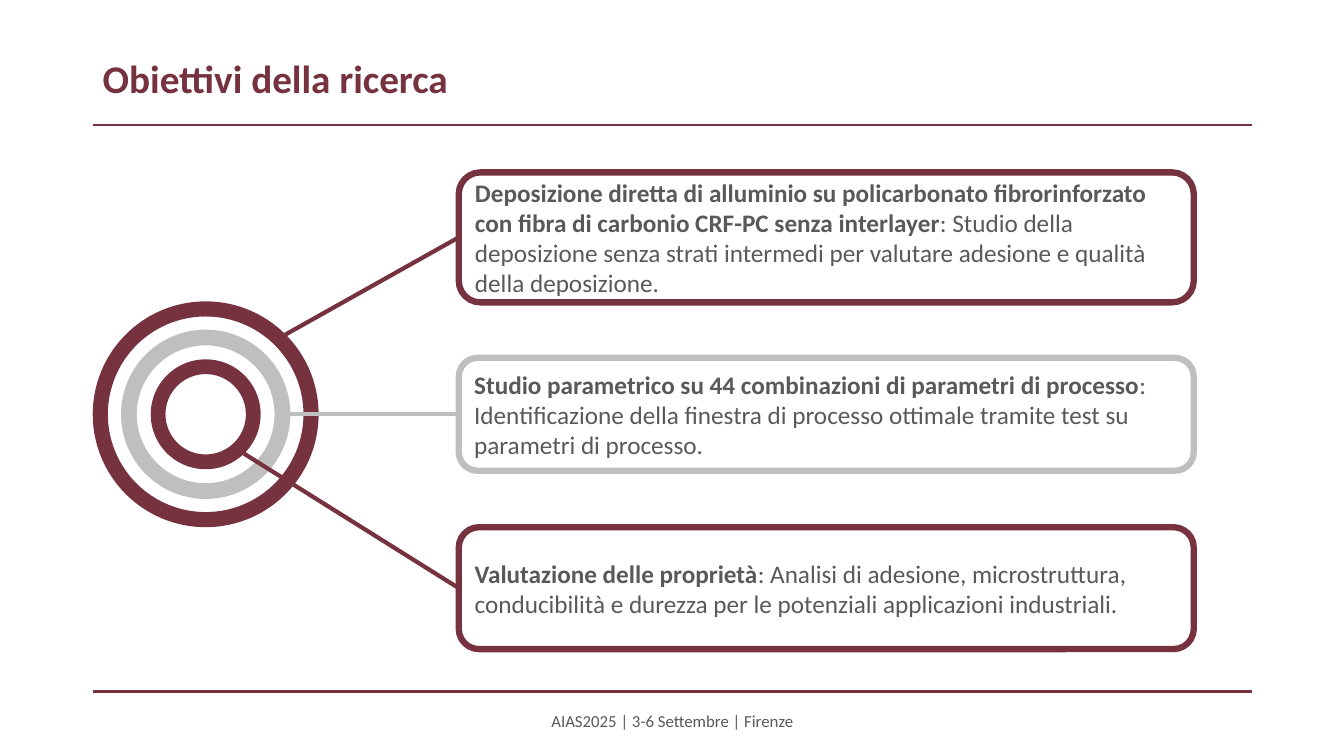
from lxml import etree
from pptx import Presentation
from pptx.dml.color import RGBColor
from pptx.enum.shapes import MSO_CONNECTOR, MSO_SHAPE
from pptx.enum.text import MSO_ANCHOR, PP_ALIGN
from pptx.oxml.ns import qn
from pptx.util import Inches, Pt

STRAIGHT = MSO_CONNECTOR.STRAIGHT
DONUT, ROUNDED = MSO_SHAPE.DONUT, MSO_SHAPE.FLOWCHART_ALTERNATE_PROCESS
MIDDLE = MSO_ANCHOR.MIDDLE
LEFT, CENTER = PP_ALIGN.LEFT, PP_ALIGN.CENTER
LEFT_SIDE = 1

COLORS = {"wine": "76323F", "silver": "BFBFBF", "text": "595959", "white": "FFFFFF"}


class SlideBuilder:
    font = "Calibri"

    def __init__(self, slide):
        self.slide = slide

    def color(self, name):
        return RGBColor.from_string(COLORS[name])

    def fill_text(self, frame, runs, size, color, align=LEFT):
        """Fill a frame with one paragraph of (text, bold) runs."""
        frame.word_wrap = True
        frame.vertical_anchor = MIDDLE
        paragraph = frame.paragraphs[0]
        paragraph.alignment = align
        paragraph.font.name = self.font
        paragraph.font.size = Pt(size)
        paragraph.font.color.rgb = self.color(color)
        for text, bold in runs:
            run = paragraph.add_run()
            run.text = text
            run.font.bold = bold
        return paragraph

    def text(self, left, top, width, height, runs, size, color, align=LEFT):
        box = self.slide.shapes.add_textbox(*map(Inches, (left, top, width, height)))
        return self.fill_text(box.text_frame, runs, size, color, align)

    def line(self, start, end, color, width, target=None):
        connector = self.slide.shapes.add_connector(STRAIGHT, *map(Inches, start + end))
        connector.line.color.rgb = self.color(color)
        connector.line.width = Pt(width)
        etree.SubElement(connector._element.spPr, qn("a:effectLst"))
        if target is not None:
            connector.end_connect(target, LEFT_SIDE)

    def shape(self, kind, left, top, width, height, fill):
        shape = self.slide.shapes.add_shape(kind, *map(Inches, (left, top, width, height)))
        shape.shadow.inherit = False
        shape.fill.solid()
        shape.fill.fore_color.rgb = self.color(fill)
        return shape

    def ring(self, center, diameter, thickness, color):
        x, y = center
        ring = self.shape(DONUT, x - diameter / 2, y - diameter / 2, diameter, diameter, color)
        ring.adjustments[0] = thickness
        ring.line.fill.background()

    def card(self, left, top, width, height, border, heading, detail):
        card = self.shape(ROUNDED, left, top, width, height, "white")
        card.line.color.rgb = self.color(border)
        card.line.width = Pt(4.5)
        self.fill_text(card.text_frame, [(heading, True), (detail, False)], 18, "text")
        return card


def main():
    presentation = Presentation()
    presentation.slide_width, presentation.slide_height = Inches(13.33), Inches(7.5)
    builder = SlideBuilder(presentation.slides.add_slide(presentation.slide_layouts[6]))

    # Header and footer
    for rule_y in (1.24, 6.86):
        builder.line((0.92, rule_y), (12.42, rule_y), "wine", 1.5)
    title = builder.text(0.92, 0.4, 9.74, 0.8, [("Obiettivi della ricerca", True)], 28, "wine")
    title.line_spacing = 0.9
    builder.text(4.42, 6.95, 4.5, 0.4, [("AIAS2025 | 3-6 Settembre | Firenze", False)],
                 12, "text", CENTER)

    # Concentric target
    for diameter, thickness, color in ((2.24, 0.067, "wine"), (1.68, 0.093, "silver"),
                                       (1.09, 0.134, "wine")):
        builder.ring((2.04, 4.11), diameter, thickness, color)

    # Objectives: top, height, colour, point on the target, heading, detail
    objectives = [
        (1.71, 1.29, "wine", (2.83, 3.32),
         "Deposizione diretta di alluminio su policarbonato fibrorinforzato con fibra "
         "di carbonio CRF-PC senza interlayer",
         ": Studio della deposizione senza strati intermedi per valutare adesione e "
         "qualità della deposizione."),
        (3.55, 1.12, "silver", (2.88, 4.11),
         "Studio parametrico su 44 combinazioni di parametri di processo",
         ": Identificazione della finestra di processo ottimale tramite test su "
         "parametri di processo."),
        (5.23, 1.21, "wine", (2.42, 4.5),
         "Valutazione delle proprietà",
         ": Analisi di adesione, microstruttura, conducibilità e durezza per le "
         "potenziali applicazioni industriali."),
    ]
    card_left, card_width = 4.55, 7.29
    for top, height, color, origin, heading, detail in objectives:
        card = builder.card(card_left, top, card_width, height, color, heading, detail)
        builder.line(origin, (card_left, top + height / 2), color, 3, card)

    presentation.save("out.pptx")


if __name__ == "__main__":
    main()
